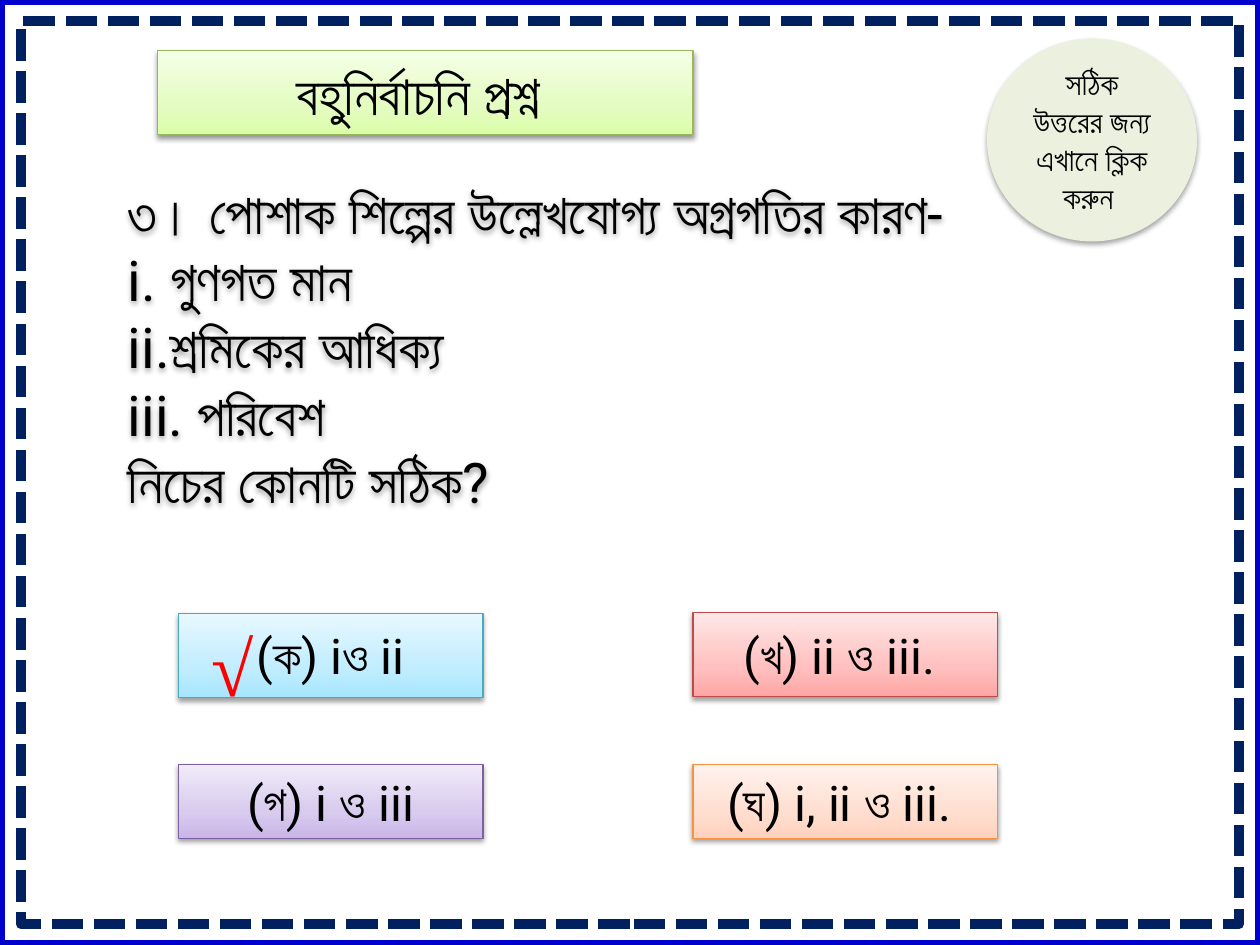
"""Build a Bengali multiple-choice question slide."""
from copy import deepcopy

from pptx import Presentation
from pptx.dml.color import RGBColor
from pptx.enum.dml import MSO_LINE
from pptx.enum.shapes import MSO_SHAPE
from pptx.enum.text import MSO_ANCHOR, MSO_AUTO_SIZE, PP_ALIGN
from pptx.oxml import parse_xml
from pptx.oxml.ns import nsdecls, qn
from pptx.util import Pt

RECTANGLE, OVAL = MSO_SHAPE.RECTANGLE, MSO_SHAPE.OVAL
DASH = MSO_LINE.SQUARE_DOT
LEFT, CENTER, JUSTIFY = PP_ALIGN.LEFT, PP_ALIGN.CENTER, PP_ALIGN.JUSTIFY
TOP, MIDDLE = MSO_ANCHOR.TOP, MSO_ANCHOR.MIDDLE
TITLE_ONLY = 5
FONT = "Roboto"
COLORS = {
    "border": "0000CC", "dashes": "002060", "text": "000000",
    "tick": "FF0000", "circle": "EBF1DE",
}
GRADIENTS = {
    "green": ("DAFDA7", "E4FCC2", "F5FFE7"),
    "blue": ("A7E6FF", "C1EDFF", "E7F8FF"),
    "red": ("FFA6A5", "FFC0BF", "FFE7E7"),
    "purple": ("C9B5E8", "D8CBEE", "F0EAF9"),
    "orange": ("FFD2BD", "FFDED0", "FFF2ED"),
}
OUTLINES = {
    "green": "98B955", "blue": "46AAC5", "red": "BF4C48",
    "purple": "7D60A0", "orange": "F69240",
}
STOPS = (0, 0.35, 1)
QUESTION = (
    "৩। পোশাক শিল্পের উল্লেখযোগ্য অগ্রগতির কারণ-",
    "i. গুণগত মান",
    "ii.শ্রমিকের আধিক্য",
    "iii. পরিবেশ",
    "নিচের কোনটি সঠিক?",
)
OPTIONS = (
    ("(ক) iও ii", "blue", 102, 350.5, 48),
    ("(খ) ii ও iii. ", "red", 396, 350, 48),
    ("(গ) i ও iii", "purple", 102, 437, 42),
    ("(ঘ) i, ii ও iii. ", "orange", 396, 437, 42),
)


def rgb(name):
    """Return the named colour."""
    return RGBColor.from_string(COLORS[name])


def write_text(shape, lines, size, align=CENTER, anchor=MIDDLE,
               color="text", font=FONT, bold=False):
    """Fill a shape with evenly formatted paragraphs."""
    frame = shape.text_frame
    frame.word_wrap = True
    frame.auto_size = MSO_AUTO_SIZE.NONE
    frame.vertical_anchor = anchor
    frame.text = "\n".join(lines)
    for paragraph in frame.paragraphs:
        paragraph.alignment = align
        paragraph.font.size = Pt(size)
        paragraph.font.bold = bold
        paragraph.font.color.rgb = rgb(color)
        paragraph.font.name = font
        properties = paragraph._p.pPr.find(qn("a:defRPr"))
        properties.append(parse_xml(f'<a:cs {nsdecls("a")} typeface="{font}"/>'))


def cast_shadow(shape, distance=1.6, opacity=38):
    """Give a shape a soft shadow below it."""
    shape.shadow.inherit = False
    effects = shape._element.spPr.find(qn("a:effectLst"))
    effects.append(parse_xml(
        f'<a:outerShdw {nsdecls("a")} blurRad="{Pt(3.1)}" dist="{Pt(distance)}" '
        f'dir="5400000" rotWithShape="0"><a:srgbClr val="000000">'
        f'<a:alpha val="{opacity * 1000}"/></a:srgbClr></a:outerShdw>'))


def style_panel(shape, theme):
    """Apply a three-stop gradient, thin outline and shadow."""
    shape.fill.gradient()
    shape.fill.gradient_angle = 90
    stop_list = shape._element.spPr.find(".//" + qn("a:gsLst"))
    stop_list.insert(1, deepcopy(stop_list[0]))
    for stop, position, color in zip(shape.fill.gradient_stops, STOPS, GRADIENTS[theme]):
        stop.position = position
        stop.color.rgb = RGBColor.from_string(color)
    shape.line.color.rgb = RGBColor.from_string(OUTLINES[theme])
    shape.line.width = Pt(0.75)
    cast_shadow(shape)


def add_shape(slide, kind, *box):
    """Add a preset shape at a box given in points."""
    return slide.shapes.add_shape(kind, *map(Pt, box))


def add_frame(slide, inset, color, dash=None):
    """Draw an unfilled border at an equal inset from the slide edges."""
    frame = add_shape(slide, RECTANGLE, inset, inset, 720 - 2 * inset, 540 - 2 * inset)
    frame.fill.background()
    frame.line.color.rgb = rgb(color)
    frame.line.width = Pt(6)
    frame.line.dash_style = dash
    frame.shadow.inherit = False


def add_title(slide, text):
    """Place and format the title placeholder."""
    title = slide.shapes.title
    title.left, title.top, title.width, title.height = map(Pt, (90, 29, 306, 48))
    style_panel(title, "green")
    write_text(title, [text], 32)


def add_text(slide, box, lines, size, **style):
    """Add a text box and return it."""
    text_box = slide.shapes.add_textbox(*map(Pt, box))
    write_text(text_box, lines, size, **style)
    return text_box


def add_option(slide, text, theme, left, top, height):
    """Add one answer panel."""
    panel = add_shape(slide, RECTANGLE, left, top, 174, height)
    style_panel(panel, theme)
    write_text(panel, [text], 28)


def add_hint(slide, text):
    """Add the round hint in the corner."""
    circle = add_shape(slide, OVAL, 564, 22, 120, 116)
    circle.fill.solid()
    circle.fill.fore_color.rgb = rgb("circle")
    circle.line.fill.background()
    cast_shadow(circle, 1.8, 35)
    write_text(circle, [text], 18)


def main():
    """Build and save the slide."""
    presentation = Presentation()
    presentation.slide_width, presentation.slide_height = Pt(720), Pt(540)
    slide = presentation.slides.add_slide(presentation.slide_layouts[TITLE_ONLY])
    add_frame(slide, 0, "border")
    add_frame(slide, 12, "dashes", DASH)
    add_title(slide, "বহুনির্বাচনি প্রশ্ন ")
    question = add_text(slide, (66, 90, 564, 216), QUESTION, 32,
                        align=JUSTIFY, anchor=MIDDLE)
    cast_shadow(question)
    for option in OPTIONS:
        add_option(slide, *option)
    add_hint(slide, "সঠিক উত্তরের জন্য এখানে ক্লিক করুন ")
    add_text(slide, (114, 350.5, 42, 60.5), ["√"], 44, align=LEFT, anchor=TOP,
             color="tick", font="Times New Roman", bold=True)
    presentation.save("out.pptx")


if __name__ == "__main__":
    main()
